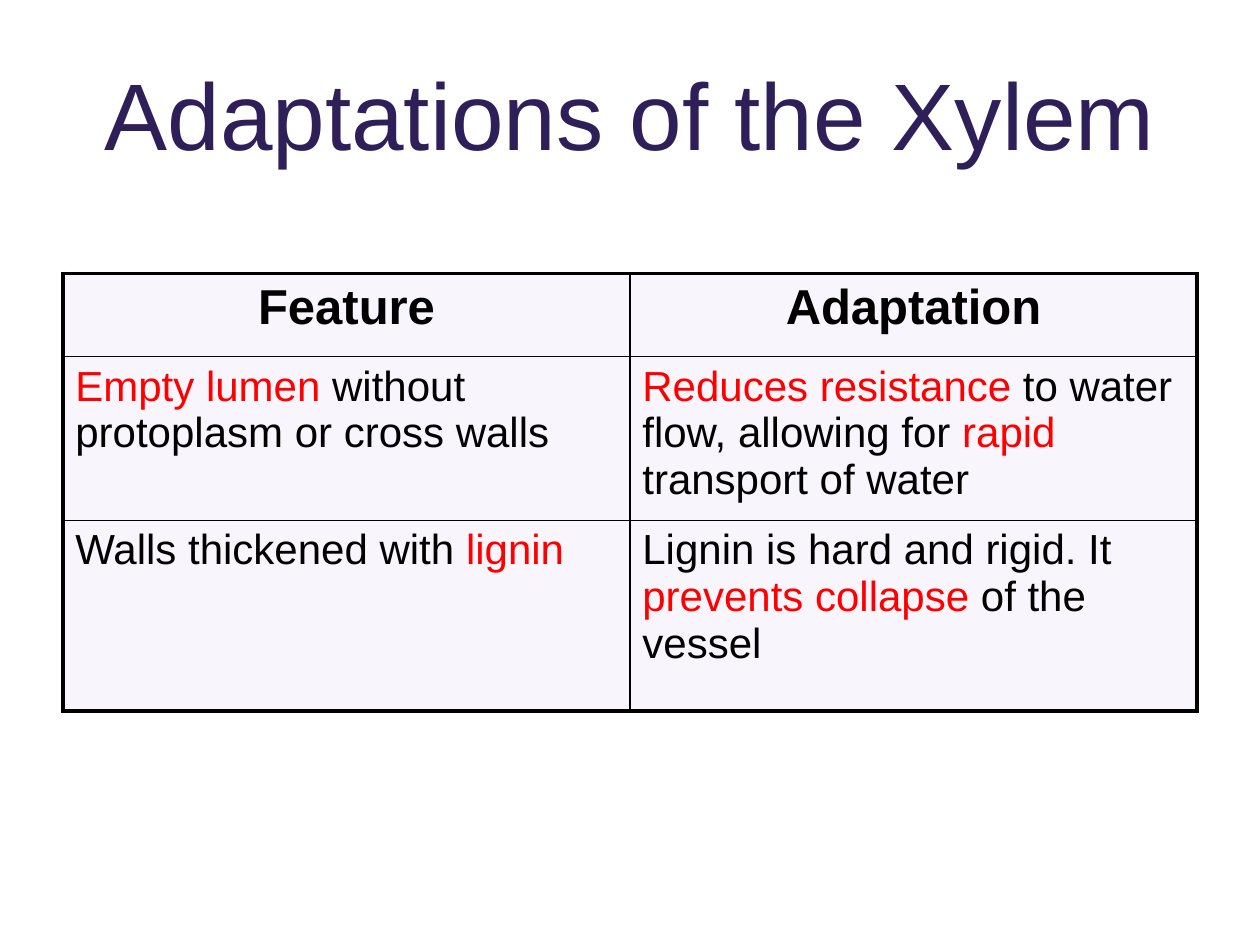
from dataclasses import dataclass

from lxml.etree import SubElement
from pptx import Presentation
from pptx.dml.color import RGBColor as Rgb
from pptx.enum.text import MSO_ANCHOR as Anchor, PP_ALIGN as Align
from pptx.oxml import parse_xml
from pptx.oxml.ns import nsdecls, qn
from pptx.util import Cm, Pt


@dataclass(frozen=True)
class Theme:
    font: str = "Arial"
    title_color: str = "2F1F58"
    text: str = "000000"
    key: str = "FF0000"
    cell: str = "F3EDFA"
    cell_alpha: int = 50
    title_size: int = 54
    header_size: int = 28
    body_size: int = 24
    outer_line: float = 2.25
    inner_line: float = 1


THEME = Theme()
COLUMN_WIDTH = 11.43
ROW_HEIGHTS = [1.68, 3.3, 3.84]
HEADERS = ["Feature", "Adaptation"]
BODY = [
    [
        [("Empty lumen", True), (" without protoplasm or cross walls", False)],
        [("Reduces resistance", True), (" to water flow, allowing for ", False),
         ("rapid ", True), ("transport of water", False)],
    ],
    [
        [("Walls thickened with ", False), ("lignin", True)],
        [("Lignin is hard and rigid. It ", False), ("prevents collapse", True),
         (" of the vessel", False)],
    ],
]


def add_run(paragraph, text, size, color, bold=False):
    run = paragraph.add_run()
    run.text = text
    run.font.name = THEME.font
    run.font.size = Pt(size)
    run.font.bold = bold
    run.font.color.rgb = Rgb.from_string(color)


def add_title(slide, text):
    title = slide.shapes.title
    title.left, title.top = Cm(1.27), Cm(0.76)
    title.width, title.height = Cm(22.86), Cm(3.18)
    title.text_frame.vertical_anchor = Anchor.MIDDLE
    title.text_frame.word_wrap = True
    paragraph = title.text_frame.paragraphs[0]
    paragraph.alignment = Align.CENTER
    paragraph.line_spacing = Pt(60)
    add_run(paragraph, text, THEME.title_size, THEME.title_color)


def fill_cell(cell):
    cell.fill.solid()
    cell.fill.fore_color.rgb = Rgb.from_string(THEME.cell)
    color = cell._tc.tcPr.find(qn("a:solidFill")).find(qn("a:srgbClr"))
    SubElement(color, qn("a:alpha")).set("val", str(THEME.cell_alpha * 1000))


def border_cell(cell, outer_sides):
    for position, side in enumerate("LRTB"):
        width = THEME.outer_line if side in outer_sides else THEME.inner_line
        line = parse_xml(
            f'<a:ln{side} {nsdecls("a")} w="{Pt(width)}"><a:solidFill>'
            f'<a:srgbClr val="{THEME.text}"/></a:solidFill></a:ln{side}>'
        )
        cell._tc.tcPr.insert(position, line)


def write_cell(cell, parts, header):
    cell.margin_left = cell.margin_right = Cm(0.25)
    cell.margin_top = cell.margin_bottom = Cm(0.13)
    cell.vertical_anchor = Anchor.TOP
    paragraph = cell.text_frame.paragraphs[0]
    paragraph.alignment = Align.CENTER if header else Align.LEFT
    size = THEME.header_size if header else THEME.body_size
    for text, is_key in parts:
        add_run(paragraph, text, size, THEME.key if is_key else THEME.text, header)


def add_feature_table(slide):
    rows = [[[(header, False)] for header in HEADERS]] + BODY
    last_row, last_column = len(rows) - 1, len(HEADERS) - 1
    table = slide.shapes.add_table(
        len(rows), len(HEADERS), Cm(1.27), Cm(5.51),
        Cm(COLUMN_WIDTH * len(HEADERS)), Cm(sum(ROW_HEIGHTS)),
    ).table
    for column in table.columns:
        column.width = Cm(COLUMN_WIDTH)
    for r, (height, row) in enumerate(zip(ROW_HEIGHTS, rows)):
        table.rows[r].height = Cm(height)
        for c, parts in enumerate(row):
            cell = table.cell(r, c)
            edges = {"L": c == 0, "R": c == last_column,
                     "T": r == 0, "B": r == last_row}
            write_cell(cell, parts, header=r == 0)
            fill_cell(cell)
            border_cell(cell, [side for side, outer in edges.items() if outer])


def main():
    deck = Presentation()
    deck.slide_width, deck.slide_height = Cm(25.4), Cm(19.05)
    slide = deck.slides.add_slide(deck.slide_layouts[5])
    add_title(slide, "Adaptations of the Xylem")
    add_feature_table(slide)
    deck.save("out.pptx")


if __name__ == "__main__":
    main()
